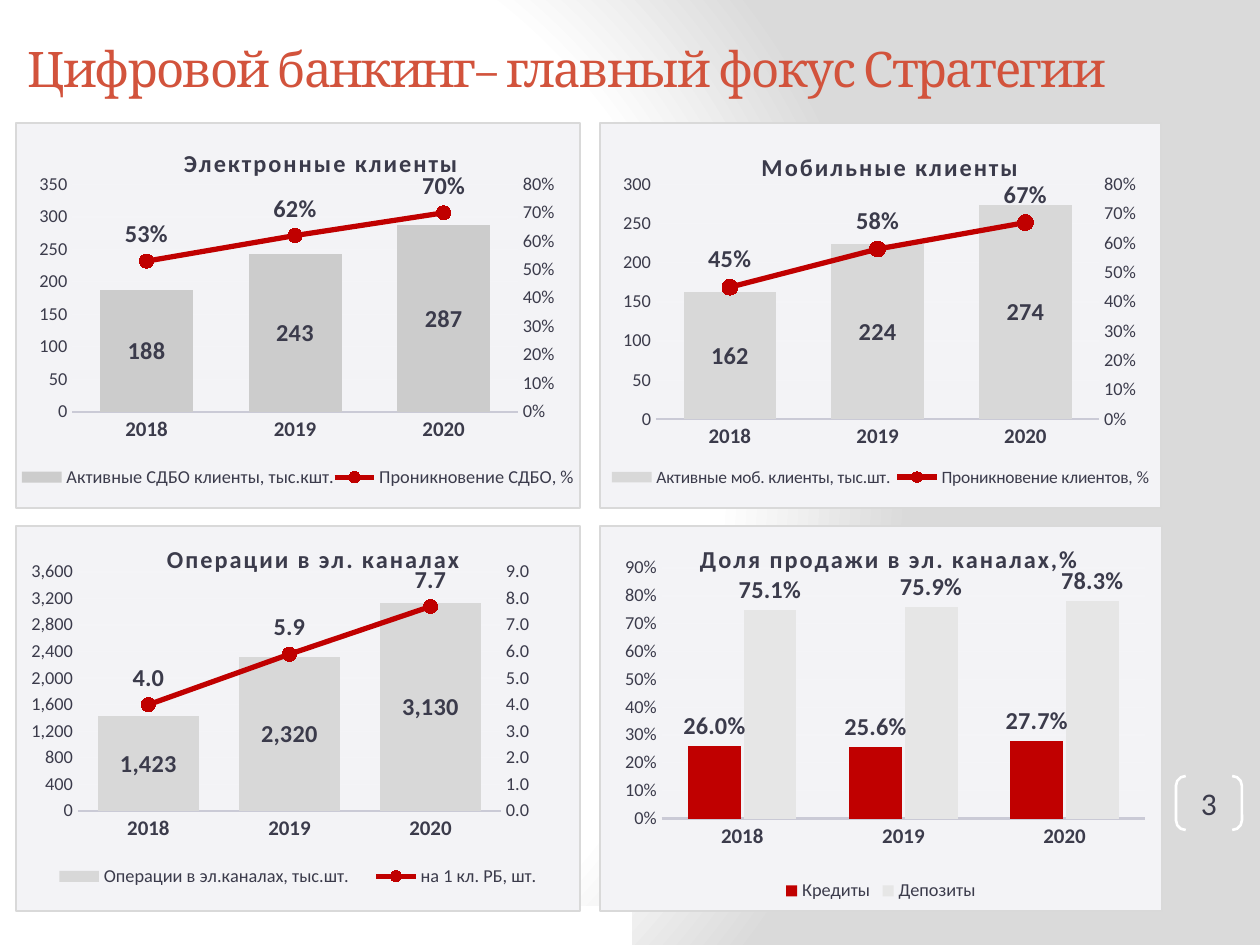
"""Build the digital banking strategy slide with four charts."""
from dataclasses import dataclass

from pptx import Presentation
from pptx.chart.axis import ValueAxis
from pptx.chart.data import CategoryChartData
from pptx.dml.color import RGBColor
from pptx.enum.chart import XL_CHART_TYPE, XL_LABEL_POSITION, XL_LEGEND_POSITION
from pptx.enum.chart import XL_MARKER_STYLE, XL_TICK_MARK
from pptx.enum.shapes import MSO_SHAPE
from pptx.enum.text import MSO_ANCHOR, PP_ALIGN
from pptx.oxml import parse_xml
from pptx.oxml.ns import nsdecls, qn
from pptx.util import Emu, Pt

EMU_PER_PX = 914400 / 126


def px(n):
    return Emu(round(n * EMU_PER_PX))


def rgb(value):
    return RGBColor.from_string(value)


@dataclass(frozen=True)
class Theme:
    heading: str = "Cambria"
    body: str = "Calibri"
    accent: str = "D2533C"
    ink: str = "3B3B4B"
    white: str = "FFFFFF"
    backdrop: str = "DADADA"
    panel: str = "F3F3F6"
    border: str = "D9D9D9"
    grid: str = "F4F4F7"
    axis: str = "CACAD6"
    red: str = "C00000"
    dark_bar: str = "CCCCCC"
    bar: str = "D8D8D8"
    light_bar: str = "E6E6E6"
    title_size: float = 28
    number_size: float = 18
    label_size: float = 14
    category_size: float = 12
    small_size: float = 10.5
    legend_size: float = 10


class Deck:
    def __init__(self, prs, theme):
        self.theme = theme
        self.s = prs.slides.add_slide(prs.slide_layouts[6])

    def backdrop(self):
        self.s.background.fill.solid()
        stops = ((0, self.theme.white), (75, self.theme.white), (100, self.theme.backdrop))
        gs = "".join(f'<a:gs pos="{pos * 1000}"><a:srgbClr val="{c}"/></a:gs>' for pos, c in stops)
        solid = self.s.element.find(".//" + qn("a:solidFill"))
        solid.getparent().replace(solid, parse_xml(
            f'<a:gradFill {nsdecls("a")} rotWithShape="1"><a:gsLst>{gs}</a:gsLst>'
            '<a:path path="circle"><a:fillToRect l="20000" t="50000" r="100000" b="50000"/>'
            '</a:path></a:gradFill>'))

    def font(self, font, size, color, bold=False, name=None):
        font.size, font.bold, font.name = Pt(size), bold, name or self.theme.body
        font.color.rgb = rgb(color)

    def run(self, p, text, size, color, bold=False, name=None, spacing=0):
        r = p.add_run()
        r.text = text
        self.font(r.font, size, color, bold, name)
        if spacing:
            r.font._element.set("spc", str(spacing))

    def title(self, text, box):
        tf = self.s.shapes.add_textbox(*map(px, box)).text_frame
        tf.word_wrap = True
        tf.vertical_anchor = MSO_ANCHOR.MIDDLE
        self.run(tf.paragraphs[0], text, self.theme.title_size, self.theme.accent,
                 name=self.theme.heading, spacing=-100)

    def shape(self, kind, box, width, fill=None):
        sp = self.s.shapes.add_shape(kind, *map(px, box))
        sp.shadow.inherit = False
        if fill:
            sp.fill.solid()
            sp.fill.fore_color.rgb = rgb(fill)
        else:
            sp.fill.background()
        sp.line.color.rgb = rgb(self.theme.white)
        sp.line.width = Pt(width)
        return sp

    def page_number(self, text, box):
        sp = self.shape(MSO_SHAPE.DOUBLE_BRACKET, box, 1.5)
        sp.adjustments[0] = 0.18
        tf = sp.text_frame
        tf.margin_left = tf.margin_right = tf.margin_top = tf.margin_bottom = 0
        tf.vertical_anchor = MSO_ANCHOR.MIDDLE
        p = tf.paragraphs[0]
        p.alignment = PP_ALIGN.CENTER
        self.run(p, text, self.theme.number_size, self.theme.ink)

    def layout(self, anchor, x, y, w=None, h=None, inner=False):
        parent = anchor.getparent()
        for old in parent.findall(qn("c:layout")):
            parent.remove(old)
        target = '<c:layoutTarget val="inner"/>' if inner else ""
        modes = '<c:xMode val="edge"/><c:yMode val="edge"/>'
        sizes = "".join(f'<c:{k} val="{v}"/>' for k, v in zip("xywh", (x, y, w, h)) if v is not None)
        anchor.addprevious(parse_xml(
            f'<c:layout {nsdecls("c")}><c:manualLayout>{target}{modes}{sizes}'
            '</c:manualLayout></c:layout>'))

    def value_axis(self, axis, top, step, fmt):
        axis.minimum_scale, axis.maximum_scale, axis.major_unit = 0, top, step
        axis.major_tick_mark = axis.minor_tick_mark = XL_TICK_MARK.NONE
        axis.tick_labels.number_format = fmt
        axis.tick_labels.number_format_is_linked = False
        self.font(axis.tick_labels.font, self.theme.small_size, self.theme.ink)
        axis.format.line.fill.background()

    def labels(self, series, fmt, position):
        labels = series.data_labels
        labels.show_value = True
        labels.number_format, labels.number_format_is_linked = fmt, False
        labels.position = position
        self.font(labels.font, self.theme.label_size, self.theme.ink, True)

    def line_on_right(self, chart, scale, marker_size):
        bar = chart.plots[0]._element
        ser = bar.findall(qn("c:ser"))[1]
        for flag in ser.findall(qn("c:invertIfNegative")):
            ser.remove(flag)
        line = parse_xml(
            f'<c:lineChart {nsdecls("c")}><c:grouping val="standard"/><c:varyColors val="0"/>'
            '<c:marker val="1"/><c:axId val="501"/><c:axId val="502"/></c:lineChart>')
        line.insert(2, ser)
        bar.addnext(line)
        last = chart.value_axis._element
        for tag, own, other, hide, side, end in (
                ("valAx", 502, 501, 0, "r", '<c:crosses val="max"/><c:crossBetween val="between"/>'),
                ("catAx", 501, 502, 1, "b", '<c:crosses val="autoZero"/>')):
            axis = parse_xml(
                f'<c:{tag} {nsdecls("c")}><c:axId val="{own}"/><c:scaling/><c:delete val="{hide}"/>'
                f'<c:axPos val="{side}"/><c:tickLblPos val="nextTo"/>'
                f'<c:crossAx val="{other}"/>{end}</c:{tag}>')
            last.addnext(axis)
            if tag == "valAx":
                self.value_axis(ValueAxis(axis), *scale)
        series = chart.plots[1].series[0]
        series.smooth = False
        series.format.line.color.rgb = rgb(self.theme.red)
        series.format.line.width = Pt(3)
        marker = series.marker
        marker.style, marker.size = XL_MARKER_STYLE.CIRCLE, marker_size
        marker.format.fill.solid()
        marker.format.fill.fore_color.rgb = rgb(self.theme.red)
        marker.format.line.color.rgb = rgb(self.theme.red)
        marker.format.line.width = Pt(0.75)
        self.labels(series, scale[2], XL_LABEL_POSITION.ABOVE)

    def chart(self, box, title, title_at, series, colors, scale, gap, overlap, plot_at,
              legend_at, label_fmt="#,##0", right=None, marker_size=8, legend_size=None):
        t = self.theme
        data = CategoryChartData()
        data.categories = ["2018", "2019", "2020"]
        for name, values in series:
            data.add_series(name, values)
        chart = self.s.shapes.add_chart(XL_CHART_TYPE.COLUMN_CLUSTERED, *map(px, box), data).chart
        self.font(chart.font, t.small_size, t.ink)
        chart.element.find(qn("c:chart")).addnext(parse_xml(
            f'<c:spPr {nsdecls("c", "a")}><a:solidFill><a:srgbClr val="{t.panel}"/></a:solidFill>'
            f'<a:ln w="12700"><a:solidFill><a:srgbClr val="{t.border}"/></a:solidFill></a:ln></c:spPr>'))
        chart.has_title = True
        self.run(chart.chart_title.text_frame.paragraphs[0], title, t.label_size, t.ink, True, spacing=100)
        self.layout(chart.chart_title._element.find(qn("c:overlay")), *title_at)
        chart.has_legend = True
        legend = chart.legend
        legend.position = XL_LEGEND_POSITION.BOTTOM
        legend.include_in_layout = False
        self.font(legend.font, legend_size or t.small_size, t.ink)
        self.layout(legend._element.find(qn("c:overlay")), *legend_at)

        axis = chart.category_axis
        axis.major_tick_mark = axis.minor_tick_mark = XL_TICK_MARK.NONE
        self.font(axis.tick_labels.font, t.category_size, t.ink, True)
        axis.format.line.color.rgb = rgb(t.axis)
        axis.format.line.width = Pt(1.25)
        self.value_axis(chart.value_axis, *scale)
        grid = chart.value_axis.major_gridlines.format.line
        grid.color.rgb, grid.width = rgb(t.grid), Pt(0.75)

        plot = chart.plots[0]
        plot.vary_by_categories = False
        plot.gap_width, plot.overlap = gap, overlap
        self.layout(plot._element, *plot_at, inner=True)
        if right:
            self.line_on_right(chart, right, marker_size)
        position = XL_LABEL_POSITION.CENTER if right else XL_LABEL_POSITION.OUTSIDE_END
        for bars, color in zip(plot.series, colors):
            bars.format.fill.solid()
            bars.format.fill.fore_color.rgb = rgb(color)
            self.labels(bars, label_fmt, position)


def main():
    prs = Presentation()
    prs.slide_width, prs.slide_height = px(1260), px(945)
    t = Theme()
    deck = Deck(prs, t)
    deck.backdrop()
    deck.title("Цифровой банкинг– главный фокус Стратегии", (15, 13, 1126, 110))
    deck.page_number("3", (1176, 776, 66, 54))
    deck.shape(MSO_SHAPE.RECTANGLE, (263, 908, 367, 37), 2, t.white)
    left, right, top, bottom, w, h = 15, 599, 122, 525, 566, 387
    percent = (0.8, 0.1, "0%")
    clients = dict(gap=60, overlap=25, legend_at=(0.01, 0.88, 0.98, 0.08), right=percent)
    deck.chart((left, top, w, h), "Электронные клиенты", (0.29, 0.05),
               [("Активные СДБО клиенты, тыс.кшт.", (188, 243, 287)),
                ("Проникновение СДБО, %", (0.53, 0.62, 0.7))],
               [t.dark_bar], (350, 50, "#,##0"), plot_at=(0.1, 0.16, 0.79, 0.59), **clients)
    deck.chart((right, top, w - 3, h), "Мобильные клиенты", (0.28, 0.06),
               [("Активные моб. клиенты, тыс.шт.", (162, 224, 274)),
                ("Проникновение клиентов, %", (0.45, 0.58, 0.67))],
               [t.bar], (300, 50, "#,##0"), plot_at=(0.1, 0.16, 0.79, 0.61),
               marker_size=9, legend_size=t.legend_size, **clients)
    deck.chart((left, bottom, w, h), "Операции в эл. каналах", (0.26, 0.03),
               [("Операции в эл.каналах, тыс.шт.", (1423, 2320, 3130)),
                ("на 1 кл. РБ, шт.", (4, 5.9, 7.7))],
               [t.bar], (3600, 400, "#,##0"), 40, 72, (0.11, 0.12, 0.75, 0.62),
               (0.04, 0.87, 0.92, 0.08), right=(9, 1, "0.0"))
    deck.chart((right, bottom, w - 2, h), "Доля продажи в эл. каналах,%", (0.17, 0.03),
               [("Кредиты", (0.26, 0.256, 0.277)), ("Депозиты", (0.751, 0.759, 0.783))],
               [t.red, t.light_bar], (0.9, 0.1, "0%"), 100, -5, (0.11, 0.11, 0.86, 0.65),
               (0.32, 0.92, 0.36, 0.07), label_fmt="0.0%")
    prs.save("out.pptx")


if __name__ == "__main__":
    main()
